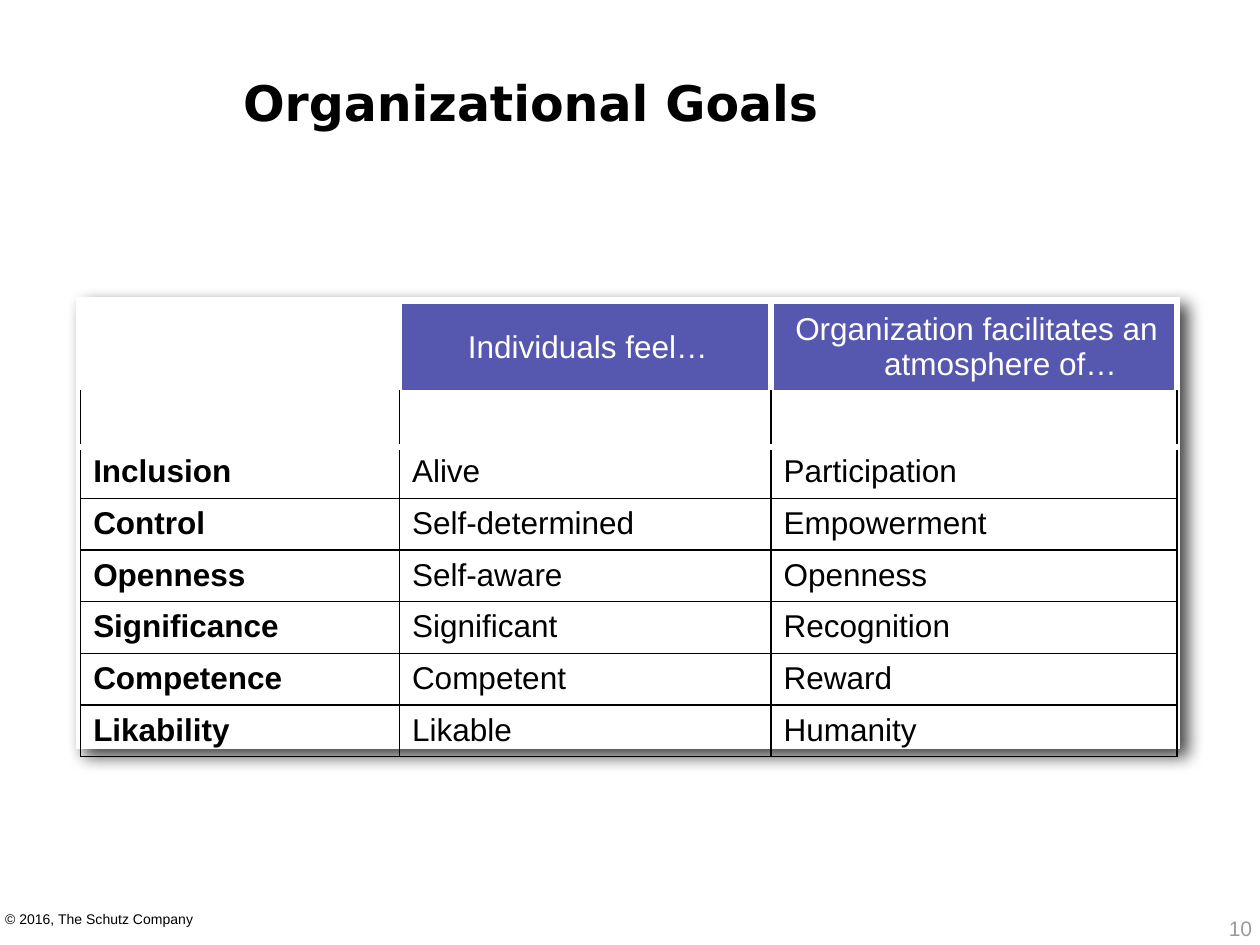
from lxml import etree
from pptx import Presentation
from pptx.dml.color import RGBColor
from pptx.enum.shapes import MSO_SHAPE
from pptx.enum.text import MSO_ANCHOR, MSO_AUTO_SIZE, PP_ALIGN
from pptx.oxml import parse_xml
from pptx.oxml.ns import nsdecls
from pptx.util import Inches, Pt

LEFT, CENTER = PP_ALIGN.LEFT, PP_ALIGN.CENTER
TOP, MIDDLE = MSO_ANCHOR.TOP, MSO_ANCHOR.MIDDLE
RECTANGLE, NO_FIT = MSO_SHAPE.RECTANGLE, MSO_AUTO_SIZE.NONE
SIDES = ("margin_left", "margin_right", "margin_top", "margin_bottom")
WHITE, BLACK, PURPLE, GRAY = "FFFFFF", "000000", "5657AE", "9B9B9B"


def color(hex_code):
    return RGBColor.from_string(hex_code)


def write(para, text, size, font="Arial", fill=BLACK, bold=False, align=LEFT, left=0, indent=0):
    """Fill one paragraph with one formatted span, indents in inches."""
    properties = para._p.get_or_add_pPr()
    properties.set("marL", str(Inches(left)))
    properties.set("indent", str(Inches(indent)))
    para.alignment = align
    span = para.add_run()
    span.text = text
    for name, value in {"size": Pt(size), "name": font, "bold": bold}.items():
        setattr(span.font, name, value)
    span.font.color.rgb = color(fill)


deck = Presentation()
deck.slide_width, deck.slide_height = Inches(10), Inches(7.5)
page = deck.slides.add_slide(deck.slide_layouts[5])

# Card behind the table
card = page.shapes.add_shape(RECTANGLE, Inches(0.61), Inches(2.36), Inches(8.75), Inches(3.58))
card.fill.solid()
card.fill.fore_color.rgb = color(WHITE)
card.line.color.rgb = color(WHITE)
card.line.width = Pt(0.75)
card._element.spPr.append(parse_xml(
    f'<a:effectLst {nsdecls("a")}><a:outerShdw blurRad="{Pt(10)}" dist="{Pt(6)}" dir="2700000" '
    f'algn="tl" rotWithShape="0"><a:srgbClr val="{BLACK}"><a:alpha val="75000"/></a:srgbClr>'
    '</a:outerShdw></a:effectLst>'))

# Title, copyright line and page number
title = page.shapes.title
copyright_line = page.shapes.add_textbox(0, 0, 0, 0)
page_number = page.shapes.add_textbox(0, 0, 0, 0)
texts = [
    (title, (1.83, 0.52, 8.1, 0.58), 0.06, MIDDLE, True, "Organizational Goals",
     {"size": 28, "font": "DejaVu Sans", "bold": True, "left": 0.04}),
    (copyright_line, (0, 7.23, 3.18, 0.13), 0, TOP, True, "© 2016, The Schutz Company",
     {"size": 8, "left": 0.04}),
    (page_number, (9.69, 7.21, 0.31, 0.31), 0.06, MIDDLE, False, "10",
     {"size": 12, "fill": GRAY, "align": CENTER}),
]
for box, place, margin, anchor, wrap, text, style in texts:
    box.left, box.top, box.width, box.height = map(Inches, place)
    frame = box.text_frame
    frame.auto_size = NO_FIT
    frame.word_wrap = wrap
    frame.vertical_anchor = anchor
    for side in SIDES:
        setattr(frame, side, Inches(margin))
    write(frame.paragraphs[0], text, **style)

# Goals table
rows = [
    ("", "Individuals feel…", "Organization facilitates an atmosphere of…"),
    ("", "", ""),
    ("Inclusion", "Alive", "Participation"),
    ("Control", "Self-determined", "Empowerment"),
    ("Openness", "Self-aware", "Openness"),
    ("Significance", "Significant", "Recognition"),
    ("Competence", "Competent", "Reward"),
    ("Likability", "Likable", "Humanity"),
]
table = page.shapes.add_table(
    len(rows), 3, Inches(0.64), Inches(2.39), Inches(8.7), Inches(3.6)).table
table.first_row = table.horz_banding = False
for column, width in zip(table.columns, (2.53, 2.95, 3.22)):
    column.width = Inches(width)

for r, row in enumerate(rows):
    table.rows[r].height = Inches(0.41 if r else 0.73)
    # The header and the blank row under it are ruled in white
    white_sides = {0: "LRTB", 1: "TB", 2: "T"}.get(r, "")
    for c, text in enumerate(row):
        cell = table.cell(r, c)
        cell.vertical_anchor = TOP if r else MIDDLE
        for side in SIDES:
            setattr(cell, side, Inches(0.06))
        for side in "LRTB":
            line_color, width = (WHITE, 4) if side in white_sides else (BLACK, 1)
            cell._tc.get_or_add_tcPr().append(etree.fromstring(
                f'<a:ln{side} {nsdecls("a")} w="{Pt(width)}"><a:solidFill>'
                f'<a:srgbClr val="{line_color}"/></a:solidFill></a:ln{side}>'))
        if r == 0 and text:
            cell.fill.solid()
            cell.fill.fore_color.rgb = color(PURPLE)
        else:
            cell.fill.background()
        if text:
            write(cell.text_frame.paragraphs[0], text, 18, fill=BLACK if r else WHITE,
                  bold=c == 0, align=LEFT if r else CENTER, left=0.42, indent=-0.38)

deck.save("out.pptx")
